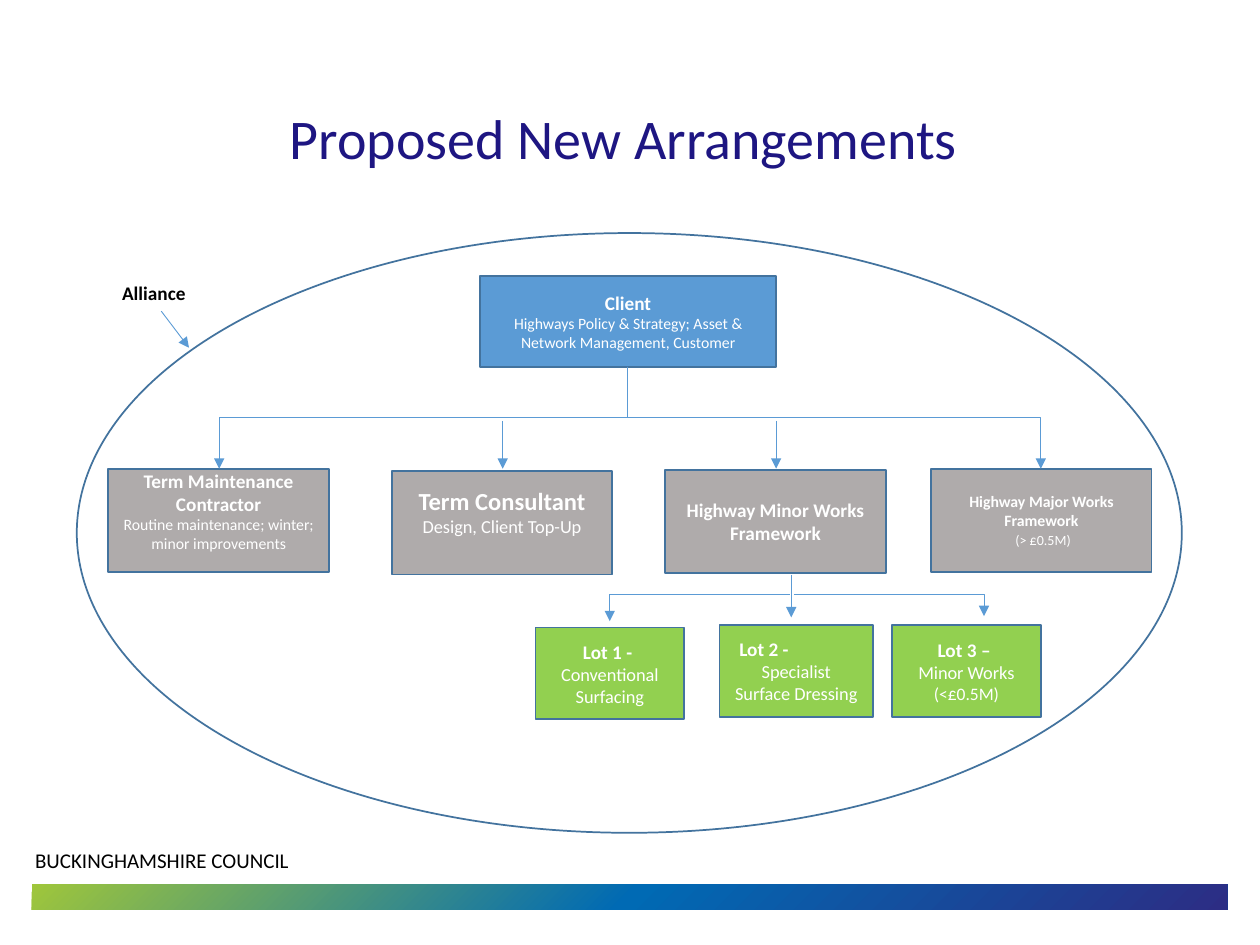
from dataclasses import dataclass

from lxml import etree
from pptx import Presentation
from pptx import util as u
from pptx.dml.color import RGBColor
from pptx.enum import shapes, text
from pptx.oxml import ns, parse_xml

In = u.Inches


@dataclass(frozen=True)
class Theme:
    """Colours, font and type sizes of the slide."""
    font: str = "Calibri"
    white: str = "FFFFFF"
    black: str = "000000"
    title: str = "1E1682"
    edge: str = "43739E"
    blue: str = "5B9BD5"
    grey: str = "AFABAB"
    green: str = "92D050"
    band: tuple = ((0, "2C2D84"), (50, "006AB4"), (100, "9FC63B"))
    huge: float = 32
    large: float = 14
    mid: float = 12
    head: float = 11
    body: float = 10.5
    note: float = 10
    small: float = 9
    tiny: float = 8


T = Theme()


def write(frame, paras, color, align=text.PP_ALIGN.CENTER):
    """Fill a frame with paragraphs of (text, size, bold) runs."""
    frame.word_wrap = True
    for i, runs in enumerate(paras):
        para = frame.add_paragraph() if i else frame.paragraphs[0]
        para.alignment = align
        for words, size, bold in runs:
            run = para.add_run()
            run.text = words
            font = run.font
            font.name, font.size, font.bold = T.font, u.Pt(size), bold
            font.color.rgb = RGBColor.from_string(color)


def label(slide, at, words, size, color, bold=False, align=text.PP_ALIGN.LEFT):
    """Add a plain text box."""
    frame = slide.shapes.add_textbox(*map(In, at)).text_frame
    write(frame, [[(words, size, bold)]], color, align)
    return frame


def block(slide, at, fill, paras=(), kind=shapes.MSO_SHAPE.RECTANGLE):
    """Add an outlined shape with centred white text."""
    box = slide.shapes.add_shape(kind, *map(In, at))
    box.shadow.inherit = False
    box.fill.solid()
    box.fill.fore_color.rgb = RGBColor.from_string(fill)
    box.line.color.rgb = RGBColor.from_string(T.edge)
    box.line.width = u.Pt(1)
    box.text_frame.vertical_anchor = text.MSO_ANCHOR.MIDDLE
    write(box.text_frame, paras, T.white)
    return box.text_frame


def arrow(slide, start, end, kind=shapes.MSO_CONNECTOR.STRAIGHT):
    """Add a thin line with a triangle at its end."""
    line = slide.shapes.add_connector(kind, *map(In, start + end))
    line.line.color.rgb = RGBColor.from_string(T.blue)
    line.line.width = u.Pt(0.5)
    etree.SubElement(line.line._get_or_add_ln(), ns.qn("a:tailEnd"), type="triangle")
    etree.SubElement(line._element.spPr, ns.qn("a:effectLst"))
    return line


def corner(slide, start, end):
    """Add an arrow that runs across and then down."""
    line = arrow(slide, start, end, shapes.MSO_CONNECTOR.ELBOW)
    line._element.spPr.find(ns.qn("a:prstGeom")).set("prst", "bentConnector2")


def branch(slide, start, end):
    """Add an arrow that runs down, across and down again."""
    (x, y), (far, low) = start, end
    wide, high = abs(far - x), low - y
    left, top = (x + far - high) / 2, (y + low - wide) / 2
    line = arrow(slide, (left, top), (left + high, top + wide), shapes.MSO_CONNECTOR.ELBOW)
    frame = line._element.spPr.find(ns.qn("a:xfrm"))
    frame.set("rot", str((90 if far < x else 270) * 60000))
    if far > x:
        frame.set("flipH", "1")


def footer(slide):
    """Add the gradient band and the council name."""
    band = slide.shapes.add_shape(
        shapes.MSO_SHAPE.RECTANGLE, *map(In, (0.25, 7.02, 9.49, 0.2)))
    band.shadow.inherit = False
    band.line.fill.background()
    props = band._element.spPr
    props.find(ns.qn("a:xfrm")).set("flipH", "1")
    stops = "".join(
        f'<a:gs pos="{pos * 1000}"><a:srgbClr val="{color}"/></a:gs>'
        for pos, color in T.band)
    props.find(ns.qn("a:prstGeom")).addnext(parse_xml(
        f'<a:gradFill {ns.nsdecls("a")}><a:gsLst>{stops}</a:gsLst><a:path path="circle">'
        '<a:fillToRect l="100000" t="100000"/></a:path></a:gradFill>'))
    label(slide, (0.18, 6.68, 4.81, 0.3), "BUCKINGHAMSHIRE COUNCIL", T.mid, T.black)


def teams(slide):
    """Add the client and the four contract boxes."""
    block(slide, (3.81, 2.19, 2.35, 0.72), T.blue, [
        [("Client", T.head, True)],
        [("Highways Policy & Strategy; Asset & Network Management, Customer",
          T.small, False)]])
    size = (1.75, 0.82)
    term = block(slide, (0.86, 3.72, *size), T.grey, [
        [("Term Maintenance Contractor", T.head, True)],
        [("Routine maintenance; winter; minor improvements", T.small, False)]])
    term.margin_bottom = In(0.2)
    advice = block(slide, (3.11, 3.74, *size), T.grey, [
        [("Term Consultant", T.large, True)],
        [("Design, Client Top-Up", T.body, False)]])
    advice.margin_bottom = In(0.23)
    block(slide, (5.28, 3.73, *size), T.grey, [
        [("Highway Minor Works Framework", T.head, True)]])
    block(slide, (7.39, 3.72, *size), T.grey, [
        [("Highway Major Works Framework", T.small, True)],
        [(" ", T.small, True), ("(> £0.5M)", T.tiny, False)]])


def lots(slide):
    """Add the three lots of the minor works framework."""
    block(slide, (4.25, 4.98, 1.18, 0.73), T.green, [
        [("Lot 1 - ", T.head, True)],
        [("Conventional Surfacing", T.body, False)]])
    second = block(slide, (5.71, 4.96, 1.22, 0.73), T.green, [
        [("Lot 2 -", T.head, True)],
        [("Specialist", T.body, False)],
        [("Surface Dressing", T.body, False)]])
    first = second.paragraphs[0]
    first.alignment = text.PP_ALIGN.LEFT
    first._p.get_or_add_pPr().set("marL", str(In(0.06)))
    block(slide, (7.08, 4.96, 1.18, 0.73), T.green, [
        [("Lot 3 – ", T.head, True)],
        [("Minor Works ", T.body, False), ("(<£0.5M)", T.note, False)]])


def links(slide):
    """Connect the boxes."""
    for end in ((1.74, 3.72), (8.26, 3.72)):
        branch(slide, (4.98, 2.91), end)
    for x in (3.99, 6.16):
        arrow(slide, (x, 3.34), (x, 3.72))
    arrow(slide, (1.28, 2.47), (1.5, 2.76))
    arrow(slide, (6.28, 4.56), (6.28, 4.9))
    corner(slide, (6.27, 4.72), (4.84, 4.93))
    corner(slide, (6.3, 4.72), (7.81, 4.89))


def main():
    """Build and save the slide."""
    deck = Presentation()
    deck.slide_width, deck.slide_height = In(10), In(7.5)
    slide = deck.slides.add_slide(deck.slide_layouts[6])
    footer(slide)
    title = label(slide, (0.69, 0.4, 8.62, 1.45), "Proposed New Arrangements ",
                  T.huge, T.title, align=text.PP_ALIGN.CENTER)
    title.vertical_anchor = text.MSO_ANCHOR.MIDDLE
    title.paragraphs[0].line_spacing = 0.9
    block(slide, (0.61, 1.85, 8.77, 4.76), T.white, kind=shapes.MSO_SHAPE.OVAL)
    label(slide, (0.87, 2.18, 0.82, 0.29), "Alliance", T.head, T.black, True)
    teams(slide)
    lots(slide)
    links(slide)
    deck.save("out.pptx")


if __name__ == "__main__":
    main()
